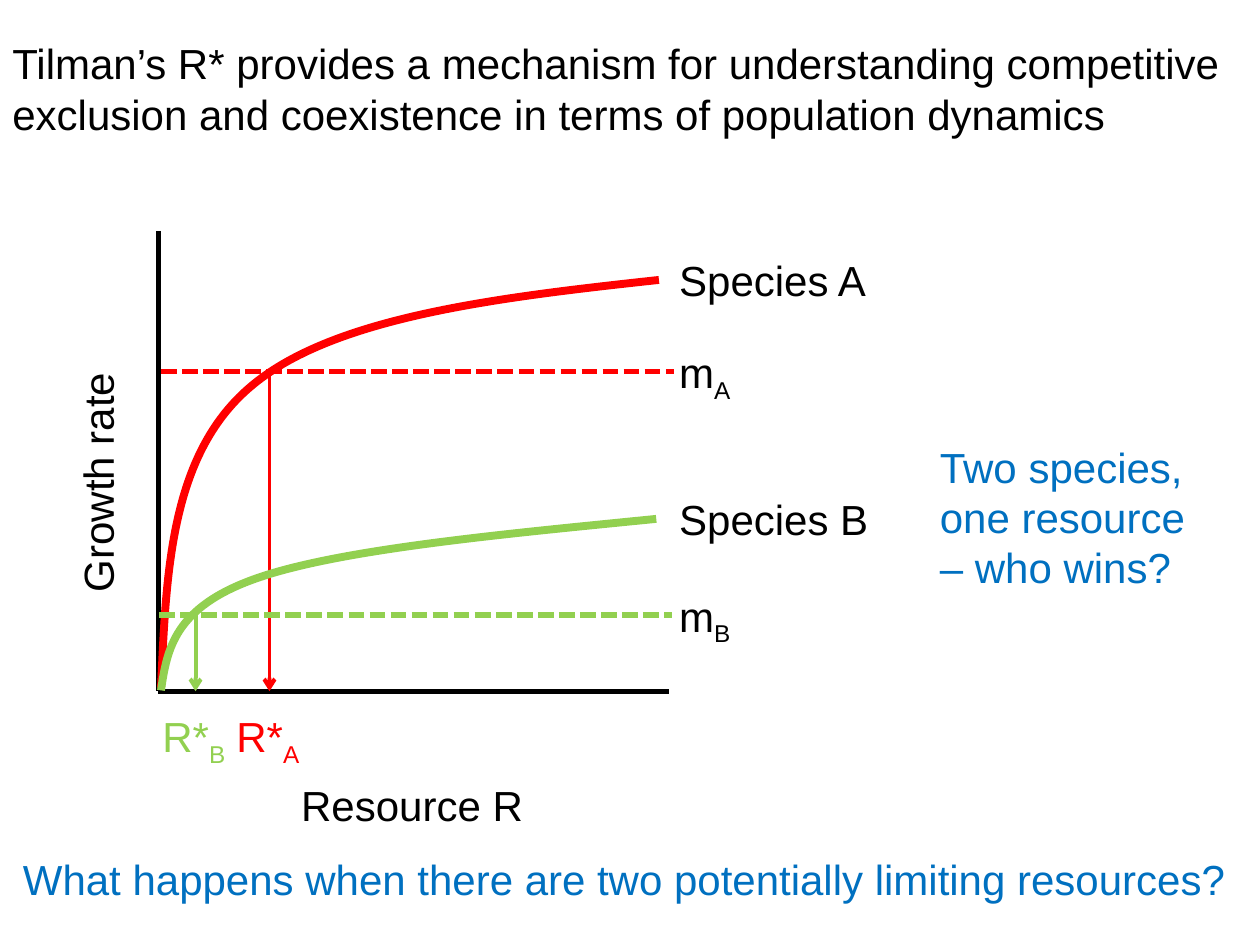
from lxml.etree import SubElement
from pptx import Presentation
from pptx.dml.color import RGBColor
from pptx.enum.dml import MSO_LINE_DASH_STYLE as Dash
from pptx.enum.shapes import MSO_CONNECTOR as Connector
from pptx.enum.text import MSO_AUTO_SIZE as AutoSize
from pptx.oxml.ns import qn
from pptx.util import Pt

BLACK = RGBColor(0x00, 0x00, 0x00)
RED = RGBColor(0xFF, 0x00, 0x00)
GREEN = RGBColor(0x92, 0xD0, 0x50)
BLUE = RGBColor(0x00, 0x70, 0xC0)

AXIS_X = 90.5
AXIS_Y = 395
LABEL_LEFT = 381
LABEL_HEIGHT = 36


def add_text(slide, text, box, color=BLACK, subscript="", wrap=False, rotation=0):
    shape = slide.shapes.add_textbox(*(Pt(length) for length in box))
    shape.rotation = rotation
    text_frame = shape.text_frame
    text_frame.text = text
    text_frame.word_wrap = wrap
    text_frame.auto_size = AutoSize.SHAPE_TO_FIT_TEXT
    paragraph = text_frame.paragraphs[0]
    if subscript:
        run = paragraph.add_run()
        run.text = subscript
        run._r.get_or_add_rPr().set("baseline", "-25000")
    for run in paragraph.runs:
        run.font.size = Pt(24)
        run.font.name = "Arial"
        run.font.color.rgb = color


def add_line(slide, start, end, color, width=3, dashed=False, arrow=False):
    connector = slide.shapes.add_connector(
        Connector.STRAIGHT, *(Pt(length) for length in (*start, *end))
    )
    line = connector.line
    line.color.rgb = color
    line.width = Pt(width)
    if dashed:
        line.dash_style = Dash.SQUARE_DOT
    if arrow:
        SubElement(line._get_or_add_ln(), qn("a:tailEnd"), type="arrow")
    SubElement(connector._element.spPr, qn("a:effectLst"))


def add_curve(slide, points, color):
    start, *others = [(Pt(x), Pt(y)) for x, y in points]
    builder = slide.shapes.build_freeform(*start)
    builder.add_line_segments(others, close=False)
    shape = builder.convert_to_shape()
    segments = list(shape._element.iter(qn("a:lnTo")))
    for index in range(0, len(segments), 3):
        first, *rest = segments[index:index + 3]
        first.tag = qn("a:cubicBezTo")
        for segment in rest:
            first.append(segment[0])
            segment.getparent().remove(segment)
    shape.fill.background()
    shape.line.color.rgb = color
    shape.line.width = Pt(4.5)
    shape.shadow.inherit = False


def add_axes(slide):
    add_line(slide, (AXIS_X, 132), (AXIS_X, AXIS_Y), BLACK)
    add_line(slide, (90, AXIS_Y), (382.5, AXIS_Y), BLACK)
    add_text(slide, "Resource R", (165, 442, 142.5, LABEL_HEIGHT))
    add_text(slide, "Growth rate", (-15, 257, 141, LABEL_HEIGHT), rotation=270)


def add_species(slide, letter, color, curve, name_top, mortality_y, mortality_x,
                resource_x, resource_left):
    add_curve(slide, curve, color)
    add_text(slide, f"Species {letter}", (LABEL_LEFT, name_top, 123, LABEL_HEIGHT))
    add_line(slide, (mortality_x, mortality_y), (mortality_x + 293, mortality_y),
             color, dashed=True)
    add_text(slide, "m", (LABEL_LEFT, mortality_y - 17.75, 45, LABEL_HEIGHT),
             subscript=letter)
    add_line(slide, (resource_x, mortality_y), (resource_x, AXIS_Y), color,
             width=2.25, arrow=True)
    add_text(slide, "R*", (resource_left, 402.5, 52.5, LABEL_HEIGHT), color,
             subscript=letter)


def main():
    presentation = Presentation()
    presentation.slide_width = Pt(720)
    presentation.slide_height = Pt(540)
    slide = presentation.slides.add_slide(presentation.slide_layouts[6])

    add_text(slide, "Tilman’s R* provides a mechanism for understanding competitive "
             "exclusion and coexistence in terms of population dynamics",
             (0, 18, 715, 65.5), wrap=True)
    add_axes(slide)
    curve_a = [(92, 393), (95, 325.5), (97.5, 258), (145, 219.5),
               (192, 181), (284.5, 170), (376.5, 160)]
    curve_b = [(92, 394.5), (95.5, 371), (99.5, 347), (146.5, 330.5),
               (193.5, 314), (284.5, 305.5), (375, 296.5)]
    add_species(slide, "A", RED, curve_a, 142, 212.5, 92, 154, 128)
    add_species(slide, "B", GREEN, curve_b, 278.5, 351.5, 91, 111.75, 85.75)
    add_text(slide, "Two species, one resource – who wins?",
             (530, 248.5, 164, 94.5), BLUE, wrap=True)
    add_text(slide, "What happens when there are two potentially limiting resources?",
             (6, 484, 708, LABEL_HEIGHT), BLUE, wrap=True)

    presentation.save("out.pptx")


if __name__ == "__main__":
    main()
